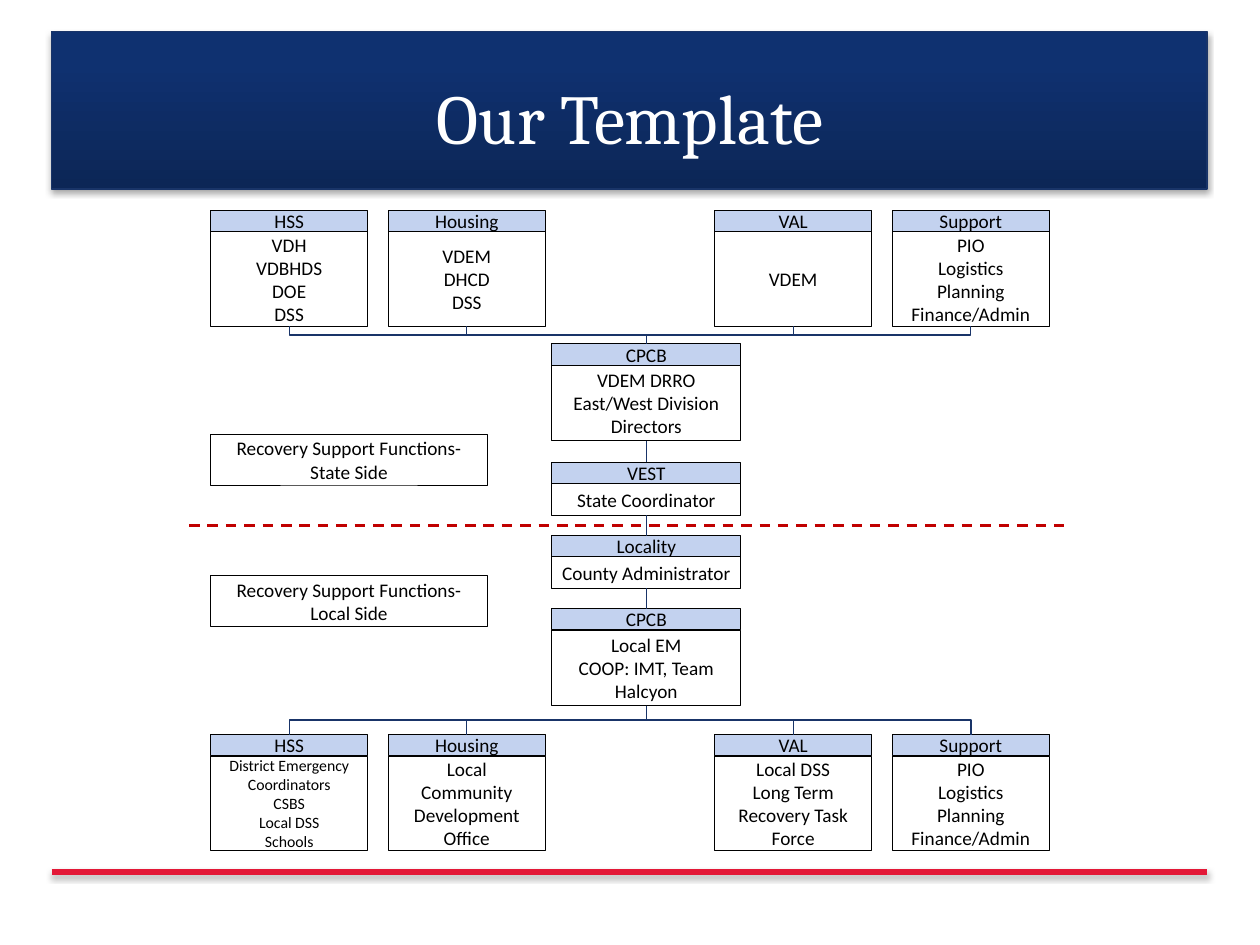
import dataclasses

import lxml.etree
import pptx
import pptx.dml.color
import pptx.enum.dml
import pptx.enum.shapes
import pptx.enum.text
import pptx.oxml
import pptx.oxml.ns
import pptx.util

Inches = pptx.util.Inches
Pt = pptx.util.Pt
Kind = pptx.enum.shapes.MSO_CONNECTOR
RECT = pptx.enum.shapes.MSO_SHAPE.RECTANGLE
TOP, BOTTOM = 0, 2
qn = pptx.oxml.ns.qn


@dataclasses.dataclass(frozen=True)
class Theme:
    deep: str = "0C2656"
    blue: str = "0F3170"
    navy: str = "193468"
    pale: str = "C3D2EF"
    red: str = "E31837"
    brick: str = "C00000"
    ink: str = "000000"
    white: str = "FFFFFF"
    head: str = "Cambria"
    body: str = "Calibri"
    large: int = 40
    base: int = 11
    small: int = 9


THEME = Theme()
HEAD = Inches(0.17)

STATE = [
    ("HSS", ["VDH", "VDBHDS", "DOE", "DSS"], {}),
    ("Housing", ["VDEM", "DHCD", "DSS"], {}),
    ("VAL", ["VDEM"], {}),
    ("Support", ["PIO", "Logistics", "Planning", "Finance/Admin"], {}),
]
LOCAL = [
    ("HSS", ["District Emergency Coordinators", "CSBS", "Local DSS", "Schools"],
     {"size": THEME.small}),
    ("Housing", ["Local Community Development Office"], {}),
    ("VAL", ["Local DSS", "Long Term Recovery Task Force"], {}),
    STATE[3],
]
CHAIN = [
    (0, 0.77, "CPCB", ["VDEM DRRO", "East/West Division Directors"], {}),
    (0.94, 0.42, "VEST", ["State Coordinator"], {}),
    (1.52, 0.42, "Locality", ["County Administrator"], {"inset": 0}),
    (2.1, 0.77, "CPCB", ["Local EM", "COOP: IMT, Team Halcyon"], {}),
]


def tint(name):
    return pptx.dml.color.RGBColor.from_string(name)


def stroke(line, color, width):
    line.color.rgb = tint(color)
    line.width = Pt(width)


def write(shape, lines, size=THEME.base, font=THEME.body, color=THEME.ink, inset=0.1):
    frame = shape.text_frame
    frame.word_wrap = True
    frame.vertical_anchor = pptx.enum.text.MSO_ANCHOR.MIDDLE
    frame.margin_left = frame.margin_right = Inches(inset)
    frame.text = "\n".join(lines)
    for para in frame.paragraphs:
        para.alignment = pptx.enum.text.PP_ALIGN.CENTER
        para.font.size = Pt(size)
        para.font.name = font
        para.font.color.rgb = tint(color)


def shade(shape, soft=False):
    """Replace the theme shadow with none, or with a soft one below."""
    props = shape._element.spPr
    for old in props.findall(qn("a:effectLst")):
        props.remove(old)
    fx = lxml.etree.SubElement(props, qn("a:effectLst"))
    if soft:
        fx.append(pptx.oxml.parse_xml(
            f'<a:outerShdw {pptx.oxml.ns.nsdecls("a")} blurRad="{Pt(3.1)}" '
            f'dist="{Pt(1.8)}" dir="5400000" rotWithShape="0"><a:srgbClr '
            f'val="{THEME.ink}"><a:alpha val="35000"/></a:srgbClr></a:outerShdw>'))


def panel(slide, x, y, w, h, lines, fill=None, **style):
    shape = slide.shapes.add_shape(RECT, x, y, w, h)
    shape.shadow.inherit = False
    if fill:
        shape.fill.solid()
        shape.fill.fore_color.rgb = tint(fill)
    else:
        shape.fill.background()
    stroke(shape.line, THEME.ink, 0.5)
    write(shape, lines, **style)
    return shape


def card(slide, x, y, w, h, name, lines, style):
    """Return the header and the body of a titled box."""
    top = panel(slide, x, y, w, HEAD, [name], fill=THEME.pale)
    return top, panel(slide, x, y + HEAD, w, h - HEAD, lines, **style)


def row(slide, x, y, w, h, cards):
    wide = Inches(1.25)
    lefts = [x, x + Inches(1.41), x + w - Inches(2.66), x + w - wide]
    return [card(slide, left, y, wide, h, *item) for left, item in zip(lefts, cards)]


def chain(slide, x, y, w):
    cards = [card(slide, x, y + Inches(drop), w, Inches(high), *item)
             for drop, high, *item in CHAIN]
    for upper, lower in zip(cards, cards[1:]):
        join(slide, upper[1], lower[0])
    return cards


def rule(slide, x, y, w, color, width):
    line = slide.shapes.add_connector(Kind.STRAIGHT, x, y, x + w, y)
    stroke(line.line, color, width)
    shade(line)
    return line


def join(slide, upper, lower, kind=Kind.STRAIGHT):
    link = slide.shapes.add_connector(kind, 0, 0, 0, 0)
    link.begin_connect(upper, BOTTOM)
    link.end_connect(lower, TOP)
    stroke(link.line, THEME.navy, 0.75)
    shade(link)
    if kind == Kind.ELBOW:
        stand(link)
    return link


def stand(link):
    """Turn an elbow so that it leaves and arrives vertically."""
    x1, y1, x2, y2 = link.begin_x, link.begin_y, link.end_x, link.end_y
    wide, high = abs(x2 - x1), y2 - y1
    link.left, link.top = (x1 + x2 - high) // 2, (y1 + y2 - wide) // 2
    link.width, link.height = high, wide
    form = link._element.spPr.find(qn("a:xfrm"))
    right = x2 > x1
    form.set("rot", "16200000" if right else "5400000")
    form.set("flipH", "1" if right else "0")
    form.set("flipV", "0")


def banner(slide, x, y, w, h):
    band = slide.shapes.add_shape(RECT, x, y, w, h)
    band.fill.gradient()
    band.fill.gradient_angle = 90
    first, last = band.fill.gradient_stops
    first.color.rgb, last.color.rgb = tint(THEME.deep), tint(THEME.blue)
    first.position, last.position = 0, 0.8
    stroke(band.line, THEME.navy, 0.75)
    shade(band, soft=True)
    title = slide.shapes.title
    title.left, title.top = x + Inches(0.09), y + Inches(0.05)
    title.width, title.height = w - Inches(0.17), h
    write(title, ["Our Template"], size=THEME.large, font=THEME.head, color=THEME.white)
    slide.shapes._spTree.append(title._element)


def chart(slide, x, y, w):
    """Place the state rows above the dashed line and the local ones below."""
    high = Inches(0.92)
    state = row(slide, x, y, w, high, STATE)
    local = row(slide, x, y + Inches(4.16), w, high, LOCAL)
    core = chain(slide, x + Inches(2.71), y + Inches(1.06), Inches(1.5))
    for drop, side in ((1.78, "State Side"), (2.9, "Local Side")):
        panel(slide, x, y + Inches(drop), Inches(2.2), Inches(0.4),
              ["Recovery Support Functions-", side], inset=0)
    split = rule(slide, x - Inches(0.17), y + Inches(2.5), w + Inches(0.34),
                 THEME.brick, 1.5)
    split.line.dash_style = pptx.enum.dml.MSO_LINE.DASH
    for above, below in zip(state, local):
        join(slide, above[1], core[0][0], Kind.ELBOW)
        join(slide, core[-1][1], below[0], Kind.ELBOW)


def main():
    deck = pptx.Presentation()
    deck.slide_width, deck.slide_height = Inches(10), Inches(7.5)
    slide = deck.slides.add_slide(deck.slide_layouts[5])
    left, wide = Inches(0.41), Inches(9.17)
    banner(slide, left, Inches(0.25), wide, Inches(1.25))
    shade(rule(slide, left, Inches(6.92), wide, THEME.red, 3), soft=True)
    chart(slide, Inches(1.67), Inches(1.67), Inches(6.66))
    deck.save("out.pptx")


if __name__ == "__main__":
    main()
